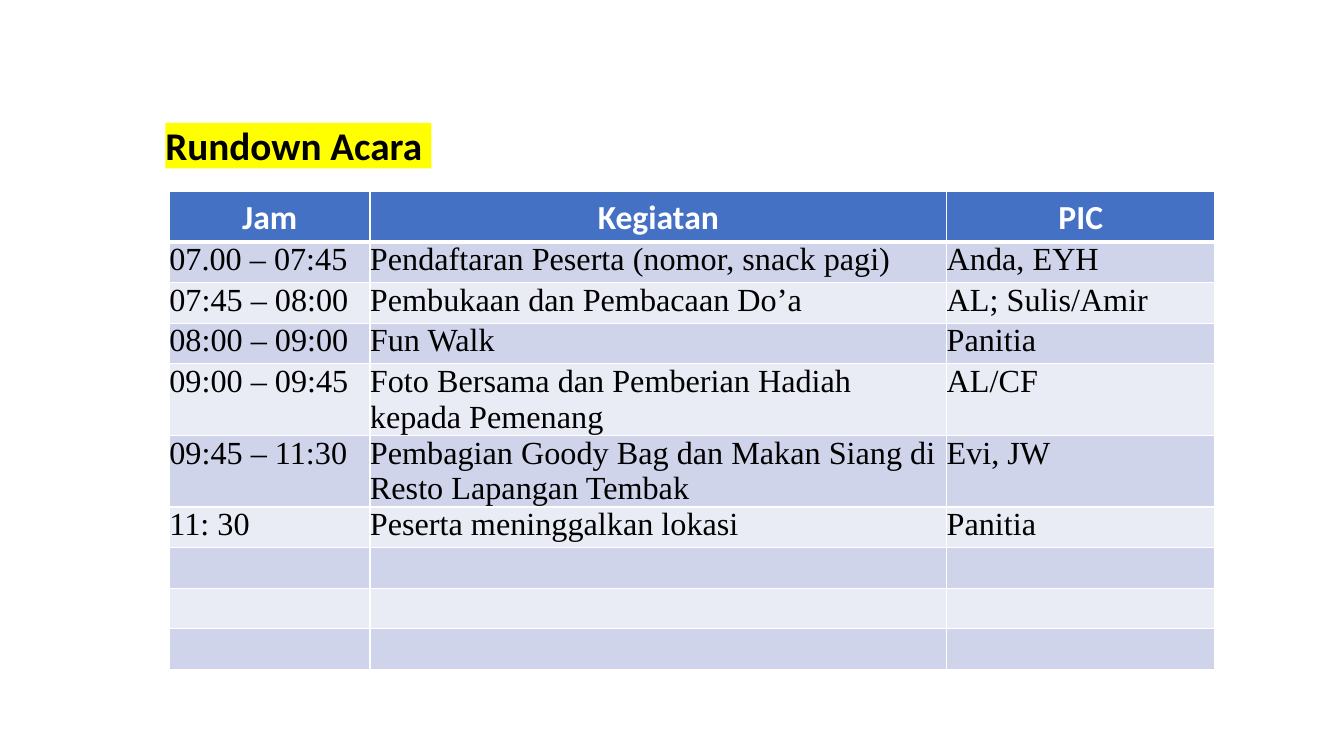
"""Build the event rundown slide with its schedule table."""
import pptx
import pptx.dml.color
import pptx.enum.shapes
import pptx.enum.text
import pptx.oxml.ns
import pptx.util
from lxml import etree

Inches = pptx.util.Inches
Pt = pptx.util.Pt
ALIGN = pptx.enum.text.PP_ALIGN
ANCHOR = pptx.enum.text.MSO_ANCHOR

TITLE = "Rundown Acara"
HEADER = ("Jam", "Kegiatan", "PIC")
SCHEDULE = [
    ("07.00 – 07:45", "Pendaftaran Peserta (nomor, snack pagi)", "Anda, EYH"),
    ("07:45 – 08:00", "Pembukaan dan Pembacaan Do’a", "AL; Sulis/Amir"),
    ("08:00 – 09:00", "Fun Walk", "Panitia"),
    ("09:00 – 09:45", "Foto Bersama dan Pemberian Hadiah kepada Pemenang", "AL/CF"),
    ("09:45 – 11:30", "Pembagian Goody Bag dan Makan Siang di Resto Lapangan Tembak", "Evi, JW"),
    ("11: 30", "Peserta meninggalkan lokasi", "Panitia"),
]
EMPTY_ROWS = 3
COLUMN_WIDTHS = (1.99, 5.72, 2.66)
HEADER_HEIGHT = 0.5
ROW_HEIGHT = 29 / 72
HEADER_FILL = "4471C4"
BAND_FILLS = ("CFD4EA", "E9EBF5")
BORDER_COLOR = "FFFFFF"
TITLE_FONT = {"name": "Calibri", "size": Pt(28), "bold": True, "color": "000000"}
HEADER_FONT = {"name": "Calibri", "size": Pt(24), "bold": True, "color": "FFFFFF"}
BODY_FONT = {"name": "Times New Roman", "size": Pt(23), "bold": False, "color": "000000"}


def rgb(value):
    return pptx.dml.color.RGBColor.from_string(value)


def set_fill(target, color):
    target.fill.solid()
    target.fill.fore_color.rgb = rgb(color)


def set_margins(target, top=0):
    margins = {"margin_left": 0, "margin_right": 0, "margin_bottom": 0, "margin_top": Inches(top)}
    for name, value in margins.items():
        setattr(target, name, value)


def write(paragraph, text, font, align):
    paragraph.alignment = align
    run = paragraph.add_run()
    run.text = text
    for name, value in font.items():
        if name == "color":
            run.font.color.rgb = rgb(value)
        else:
            setattr(run.font, name, value)


def set_borders(cell, widths):
    properties = cell._tc.get_or_add_tcPr()
    for side, width in widths.items():
        line = etree.SubElement(properties, pptx.oxml.ns.qn(f"a:ln{side}"), w=str(Pt(width)))
        fill = etree.SubElement(line, pptx.oxml.ns.qn("a:solidFill"))
        etree.SubElement(fill, pptx.oxml.ns.qn("a:srgbClr"), val=BORDER_COLOR)


def add_title(slide):
    title = slide.shapes.add_shape(
        pptx.enum.shapes.MSO_SHAPE.RECTANGLE, Inches(1.64), Inches(1.22), Inches(2.64), Inches(0.45))
    title.shadow.inherit = False
    set_fill(title, "FFFF00")
    title.line.fill.background()
    frame = title.text_frame
    frame.word_wrap = True
    frame.vertical_anchor = ANCHOR.TOP
    set_margins(frame)
    paragraph = frame.paragraphs[0]
    paragraph.line_spacing = Pt(32.4)
    write(paragraph, TITLE, TITLE_FONT, ALIGN.LEFT)


def add_schedule(slide):
    rows = [HEADER, *SCHEDULE] + [("",) * len(HEADER)] * EMPTY_ROWS
    heights = [HEADER_HEIGHT] + [ROW_HEIGHT] * (len(rows) - 1)
    table = slide.shapes.add_table(
        len(rows), len(HEADER), Inches(1.68), Inches(1.9),
        Inches(sum(COLUMN_WIDTHS)), Inches(sum(heights))).table
    table.first_row = table.horz_banding = False
    for column, width in zip(table.columns, COLUMN_WIDTHS):
        column.width = Inches(width)
    for index, (texts, height) in enumerate(zip(rows, heights)):
        table.rows[index].height = Inches(height)
        is_header = index == 0
        for column, text in enumerate(texts):
            cell = table.cell(index, column)
            set_margins(cell, 0.06 if is_header else 0)
            set_borders(cell, {"L": 1, "R": 1, "T": 3 if index == 1 else 1, "B": 3 if is_header else 1})
            set_fill(cell, HEADER_FILL if is_header else BAND_FILLS[(index - 1) % 2])
            if text:
                write(cell.text_frame.paragraphs[0], text,
                      HEADER_FONT if is_header else BODY_FONT,
                      ALIGN.CENTER if is_header else ALIGN.LEFT)


def main():
    presentation = pptx.Presentation()
    presentation.slide_width = Inches(13.33)
    presentation.slide_height = Inches(7.5)
    slide = presentation.slides.add_slide(presentation.slide_layouts[6])
    add_title(slide)
    add_schedule(slide)
    presentation.save("out.pptx")


if __name__ == "__main__":
    main()
